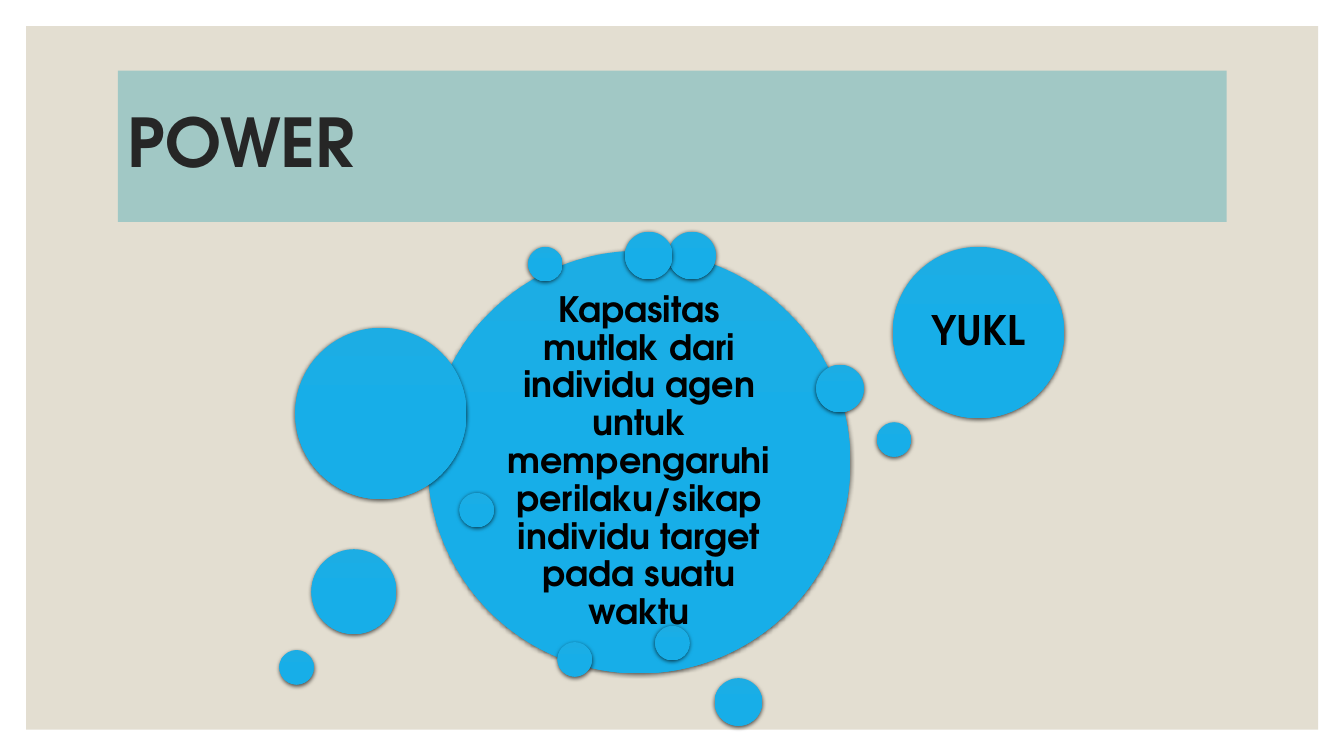
from lxml.etree import SubElement
from pptx import Presentation
from pptx.dml.color import RGBColor
from pptx.enum.shapes import MSO_SHAPE as SHAPE
from pptx.enum.text import MSO_ANCHOR as ANCHOR, MSO_AUTO_SIZE as AUTO, PP_ALIGN as ALIGN
from pptx.oxml.ns import qn
from pptx.util import Cm, Pt

FONT = "TeX Gyre Adventor"
TITLE = "POWER"
DEFINITION = ("Kapasitas mutlak dari individu agen untuk mempengaruhi "
              "perilaku/sikap individu target pada suatu waktu")
AUTHOR = "YUKL"

PANEL = (0.66, 0.66, 32.56, 17.73)
TITLE_BOX = (2.97, 1.78, 27.94, 3.81)
DIAMETERS = {"tiny": 0.87, "small": 1.2, "medium": 2.14, "large": 4.32, "main": 10.65}

# size, left, top, text, text size, inset
BUBBLES = [
    ("main", 10.78, 6.32, DEFINITION, 25, 0.25),
    ("small", 16.84, 5.84),
    ("tiny", 14.05, 16.18),
    ("tiny", 22.1, 10.64),
    ("small", 18.01, 17.09),
    ("tiny", 13.31, 6.22),
    ("tiny", 11.58, 12.42),
    ("large", 7.44, 8.26),
    ("small", 15.75, 5.84),
    ("medium", 7.85, 13.84),
    ("large", 22.5, 6.22, AUTHOR, 29, 0.3),
    ("small", 20.57, 9.19),
    ("tiny", 7.04, 16.38),
    ("tiny", 16.51, 15.77),
]


def rgb(value):
    return RGBColor.from_string(value)


def fill_solid(s, color):
    s.fill.solid()
    s.fill.fore_color.rgb = rgb(color)


def set_text(s, text, size, color, align):
    tf = s.text_frame
    tf.word_wrap, tf.auto_size, tf.vertical_anchor = True, AUTO.NONE, ANCHOR.MIDDLE
    p = tf.paragraphs[0]
    p.alignment, p.line_spacing = align, 0.9
    r = p.add_run()
    r.text = text
    for name, value in {"name": FONT, "size": Pt(size), "bold": True}.items():
        setattr(r.font, name, value)
    r.font.color.rgb = rgb(color)


def add_shadow(s):
    s.shadow.inherit = False
    effects = s._element.spPr.find(qn("a:effectLst"))
    shadow = SubElement(effects, qn("a:outerShdw"), blurRad=str(Pt(3)),
                        dist=str(Pt(1)), dir="5400000", rotWithShape="0")
    color = SubElement(shadow, qn("a:srgbClr"), val="000000")
    SubElement(color, qn("a:alpha"), val="63000")


def add_bubble(shapes, size, left, top, text=None, text_size=None, inset=None):
    d = Cm(DIAMETERS[size])
    s = shapes.add_shape(SHAPE.OVAL, Cm(left), Cm(top), d, d)
    s.fill.gradient()
    s.fill.gradient_angle = 270
    for stop, color, position in zip(s.fill.gradient_stops, ("1CADE4", "17AEE8"), (0, 0.5)):
        stop.color.rgb = rgb(color)
        stop.position = position
    s.line.fill.background()
    add_shadow(s)
    if text:
        for side in ("left", "right", "top", "bottom"):
            setattr(s.text_frame, f"margin_{side}", Cm(inset))
        set_text(s, text, text_size, "000000", ALIGN.CENTER)


prs = Presentation()
prs.slide_width, prs.slide_height = Cm(33.87), Cm(19.05)
slide = prs.slides.add_slide(prs.slide_layouts[5])

panel = slide.shapes.add_shape(SHAPE.RECTANGLE, *map(Cm, PANEL))
fill_solid(panel, "E3DED1")
panel.line.fill.background()
panel.shadow.inherit = False
slide.shapes._spTree.insert(2, panel._element)  # behind the title

title = slide.shapes.title
title.left, title.top, title.width, title.height = map(Cm, TITLE_BOX)
fill_solid(title, "A1C8C5")
set_text(title, TITLE, 48, "262626", ALIGN.LEFT)

group = slide.shapes.add_group_shape()
for bubble in BUBBLES:
    add_bubble(group.shapes, *bubble)

prs.save("out.pptx")
